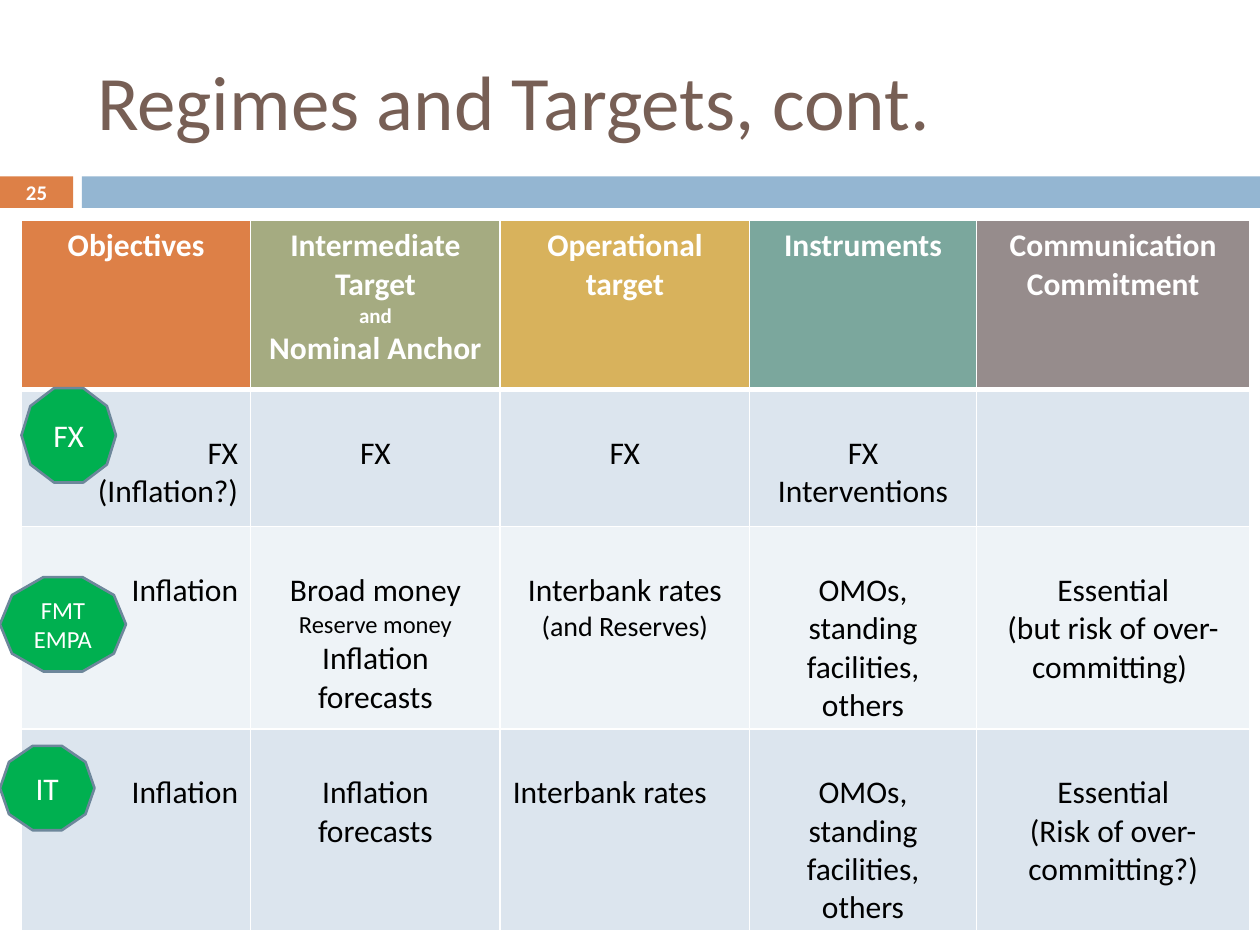
"""Build the "Regimes and Targets, cont." slide."""
from dataclasses import dataclass

from lxml import etree
from pptx import Presentation
from pptx import util as u
from pptx.dml.color import RGBColor
from pptx.enum import shapes, text
from pptx.oxml import ns

FONT = "Calibri"
COLOURS = {
    "white": "FFFFFF", "black": "000000", "title": "775F55",
    "orange": "DD8047", "blue": "94B6D2", "olive": "A5AB81",
    "gold": "D8B25C", "teal": "7BA79D", "taupe": "968C8C",
    "band_dark": "DCE5EE", "band_light": "EEF3F7",
    "badge": "00B050", "badge_edge": "6D879B",
}
LEFT, CENTER, RIGHT = text.PP_ALIGN.LEFT, text.PP_ALIGN.CENTER, text.PP_ALIGN.RIGHT
COLUMN_WIDTHS = (1.82, 1.98, 1.98, 1.8, 2.17)
ROW_HEIGHTS = (1.34, 1.09, 1.41, 1.41)
HEADER_FILLS = ("orange", "olive", "gold", "teal", "taupe")
BAND_FILLS = ("band_dark", "band_light")
FIRST_LINE_DROP = 0.355


@dataclass(frozen=True)
class Line:
    words: str
    size: float = 18
    align: text.PP_ALIGN = CENTER


@dataclass(frozen=True)
class Bar:
    left: float
    width: float
    fill: str


@dataclass(frozen=True)
class Badge:
    left: float
    top: float
    width: float
    height: float
    lines: tuple[Line, ...]


BARS = (Bar(0, 0.58, "orange"), Bar(0.65, 9.35, "blue"))
BADGES = (
    Badge(0.17, 3.08, 0.75, 0.75, (Line("FX"),)),
    Badge(0, 4.58, 1, 0.75, (Line("FMT", 14), Line("EMPA", 14))),
    Badge(0, 5.92, 0.75, 0.67, (Line("IT"),)),
)
OPERATIONS = (Line("OMOs,"), Line("standing facilities, others"))
INFLATION = (Line("Inflation", align=RIGHT),)
FORECASTS = Line("Inflation forecasts")
REGIMES = (
    (
        (Line("Objectives"),),
        (Line("Intermediate Target"), Line("and", 12), Line("Nominal Anchor")),
        (Line("Operational target"),),
        (Line("Instruments"),),
        (Line("Communication"), Line("Commitment")),
    ),
    (
        (Line("FX", align=RIGHT), Line("(Inflation?)", align=RIGHT)),
        (Line("FX"),),
        (Line("FX"),),
        (Line("FX Interventions"),),
        (),
    ),
    (
        INFLATION,
        (Line("Broad money"), Line("Reserve money", 14), FORECASTS),
        (Line("Interbank rates"), Line("(and Reserves)", 16)),
        OPERATIONS,
        (Line("Essential"), Line("(but risk of over-committing) ")),
    ),
    (
        INFLATION,
        (FORECASTS,),
        (Line("Interbank rates", align=LEFT),),
        OPERATIONS,
        (Line("Essential"), Line("(Risk of over-committing?)")),
    ),
)


def rgb(name: str) -> RGBColor:
    """Look up a named colour."""
    return RGBColor.from_string(COLOURS[name])


def write(frame, lines: tuple[Line, ...], colour: str, bold: bool = False) -> None:
    """Write each line as a paragraph with one formatted run."""
    frame.word_wrap = True
    for index, line in enumerate(lines):
        paragraph = frame.paragraphs[0] if index == 0 else frame.add_paragraph()
        paragraph.alignment = line.align
        run = paragraph.add_run()
        run.text = line.words
        run.font.name, run.font.size, run.font.bold = FONT, u.Pt(line.size), bold
        run.font.color.rgb = rgb(colour)


def clear_insets(frame) -> None:
    """Centre a frame vertically and remove its margins."""
    frame.margin_left = frame.margin_right = frame.margin_top = frame.margin_bottom = 0
    frame.vertical_anchor = text.MSO_ANCHOR.MIDDLE


def add_title(slide) -> None:
    """Place and fill the title placeholder."""
    title = slide.shapes.title
    title.left, title.top = u.Inches(0.67), u.Inches(0.25)
    title.width, title.height = u.Inches(8.92), u.Inches(1.08)
    title.text_frame.vertical_anchor = text.MSO_ANCHOR.MIDDLE
    write(title.text_frame, (Line("Regimes and Targets, cont.", 44, LEFT),), "title")


def add_bar(slide, bar: Bar) -> None:
    """Draw one part of the band under the title."""
    band = slide.shapes.add_shape(
        shapes.MSO_SHAPE.RECTANGLE,
        u.Inches(bar.left), u.Inches(1.4), u.Inches(bar.width), u.Inches(0.25))
    band.shadow.inherit = False
    band.fill.solid()
    band.fill.fore_color.rgb = rgb(bar.fill)
    band.line.fill.background()


def add_page_number(slide) -> None:
    """Write the page number over the orange bar."""
    number = slide.shapes.add_textbox(
        u.Inches(0), u.Inches(1.39), u.Inches(0.58), u.Inches(0.27))
    clear_insets(number.text_frame)
    write(number.text_frame, (Line("25", 11.9),), "white", bold=True)


def set_borders(cell, top: float, bottom: float) -> None:
    """Give a cell white borders, with widths in points."""
    properties = cell._tc.get_or_add_tcPr()
    widths = {"a:lnL": 1, "a:lnR": 1, "a:lnT": top, "a:lnB": bottom}
    for position, (tag, width) in enumerate(widths.items()):
        edge = etree.Element(ns.qn(tag), w=str(u.Pt(width)))
        fill = etree.SubElement(edge, ns.qn("a:solidFill"))
        etree.SubElement(fill, ns.qn("a:srgbClr"), val=COLOURS["white"])
        properties.insert(position, edge)


def add_regime_table(slide) -> None:
    """Draw the table of regimes and their targets."""
    table = slide.shapes.add_table(
        len(ROW_HEIGHTS), len(COLUMN_WIDTHS), u.Inches(0.17), u.Inches(1.75),
        u.Inches(sum(COLUMN_WIDTHS)), u.Inches(sum(ROW_HEIGHTS))).table
    for column, width in zip(table.columns, COLUMN_WIDTHS):
        column.width = u.Inches(width)
    for row_index, (regime, height) in enumerate(zip(REGIMES, ROW_HEIGHTS)):
        table.rows[row_index].height = u.Inches(height)
        header = row_index == 0
        for column_index, lines in enumerate(regime):
            cell = table.cell(row_index, column_index)
            fill = HEADER_FILLS[column_index] if header else BAND_FILLS[(row_index - 1) % 2]
            cell.fill.solid()
            cell.fill.fore_color.rgb = rgb(fill)
            set_borders(cell, 3 if row_index == 1 else 1, 3 if header else 1)
            if not header:
                cell.margin_top = u.Inches(FIRST_LINE_DROP)
            write(cell.text_frame, lines, "white" if header else "black", header)


def add_badge(slide, badge: Badge) -> None:
    """Draw a decagon that names a regime."""
    decagon = slide.shapes.add_shape(
        shapes.MSO_SHAPE.DECAGON, u.Inches(badge.left), u.Inches(badge.top),
        u.Inches(badge.width), u.Inches(badge.height))
    decagon.shadow.inherit = False
    decagon.fill.solid()
    decagon.fill.fore_color.rgb = rgb("badge")
    decagon.line.color.rgb = rgb("badge_edge")
    decagon.line.width = u.Pt(1.5)
    clear_insets(decagon.text_frame)
    write(decagon.text_frame, badge.lines, "white")


def main() -> None:
    """Assemble and save the slide."""
    deck = Presentation()
    deck.slide_width, deck.slide_height = u.Inches(10), u.Inches(7.5)
    slide = deck.slides.add_slide(deck.slide_layouts[5])
    for bar in BARS:
        add_bar(slide, bar)
    add_title(slide)
    add_page_number(slide)
    add_regime_table(slide)
    for badge in BADGES:
        add_badge(slide, badge)
    deck.save("out.pptx")


if __name__ == "__main__":
    main()
